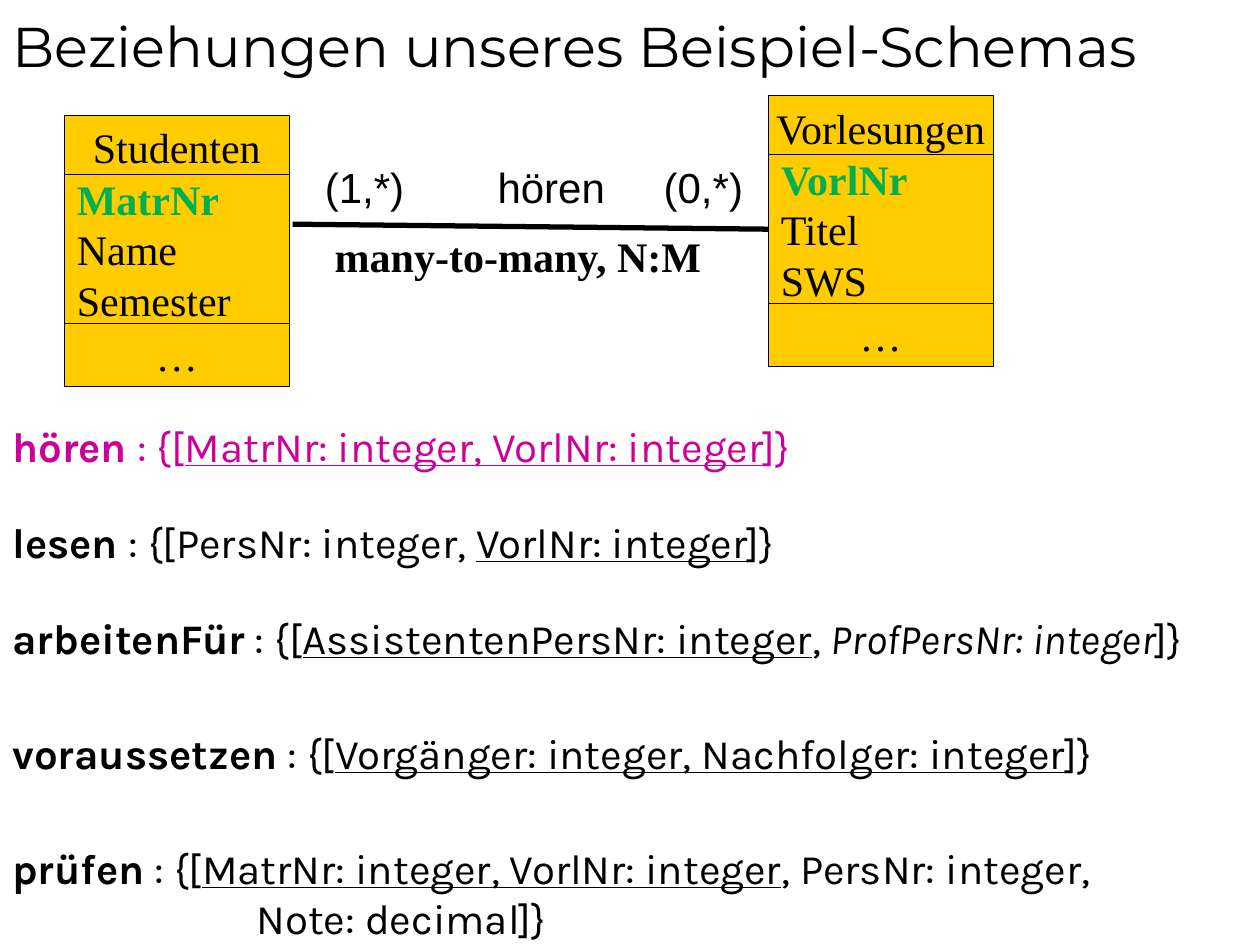
"""Build the slide on the relationships of the example schema."""
from lxml.etree import SubElement
from pptx import Presentation
from pptx.dml.color import RGBColor
from pptx.enum.shapes import MSO_CONNECTOR, MSO_SHAPE
from pptx.enum.text import MSO_ANCHOR, PP_ALIGN
from pptx.oxml.ns import qn
from pptx.util import Cm, Pt

COLORS = {
    "ink": "000000",
    "entity": "FFCC00",
    "key": "00B050",
    "highlight": "CC0099",
}
SERIF = "Times New Roman"
ENTITY_WIDTH, ROW_HEIGHT, LIST_OFFSET, LIST_HEIGHT = 4.53, 1.27, 1.19, 3
RELATION_GAP = 14.5

RELATIONS = [
    ("highlight", 1.4, [("hören", "b"), (" : {[", ""),
                        ("MatrNr: integer, VorlNr: integer", "u"), ("]}", "")]),
    ("ink", 1.4, [("lesen ", "b"), (": {[PersNr: integer, ", ""),
                  ("VorlNr: integer", "u"), ("]}", "")]),
    ("ink", 1.4, [("arbeitenFür", "b"), (" : {[", ""),
                  ("AssistentenPersNr: integer", "u"), (", ", ""),
                  ("ProfPersNr: integer", "i"), ("]}", "")]),
    ("ink", 1.78, [("voraussetzen", "b"), (" : {[", ""),
                   ("Vorgänger: integer, Nachfolger: integer", "u"), ("]}", "")]),
    ("ink", 1.78, [("prüfen", "b"), (" : {[", ""),
                   ("MatrNr: integer, VorlNr: integer", "u"),
                   (", PersNr: integer,", "")]),
]


def rgb(name):
    """Return the named colour."""
    return RGBColor.from_string(COLORS[name])


def add_span(para, text, font=SERIF, size=24, color="ink", style=""):
    """Add formatted text; style holds any of the letters b, i and u."""
    span = para.add_run()
    span.text = text
    span.font.name = font
    span.font.size = Pt(size)
    span.font.color.rgb = rgb(color)
    span.font.bold = "b" in style
    span.font.italic = "i" in style
    span.font.underline = "u" in style


def add_text_box(page, left, top, width, height, anchor=MSO_ANCHOR.TOP):
    """Add a wrapping text box and return its text frame."""
    frame = page.shapes.add_textbox(Cm(left), Cm(top), Cm(width), Cm(height)).text_frame
    frame.word_wrap = True
    frame.vertical_anchor = anchor
    return frame


def add_cell(page, left, top, height, lines, align=PP_ALIGN.CENTER):
    """Add one compartment of an entity with its (text, color, style) lines."""
    box = page.shapes.add_shape(MSO_SHAPE.RECTANGLE, Cm(left), Cm(top),
                                Cm(ENTITY_WIDTH), Cm(height))
    box.shadow.inherit = False
    box.fill.solid()
    box.fill.fore_color.rgb = rgb("entity")
    box.line.color.rgb = rgb("ink")
    box.line.width = Pt(0.5)
    frame = box.text_frame
    frame.word_wrap = align == PP_ALIGN.LEFT
    frame.vertical_anchor = MSO_ANCHOR.MIDDLE
    for index, (text, color, style) in enumerate(lines):
        para = frame.add_paragraph() if index else frame.paragraphs[0]
        para.alignment = align
        add_span(para, text, color=color, style=style)
    return box


def add_entity(page, left, top, name, key, attributes):
    """Add an entity and return its attribute compartment."""
    add_cell(page, left, top, ROW_HEIGHT, [(name, "ink", "")])
    lines = [(key, "key", "b")] + [(text, "ink", "") for text in attributes]
    box = add_cell(page, left, top + LIST_OFFSET, LIST_HEIGHT, lines, PP_ALIGN.LEFT)
    add_cell(page, left, top + LIST_OFFSET + LIST_HEIGHT, ROW_HEIGHT, [("…", "ink", "")])
    return box


def add_association(page, left, top, target):
    """Draw the line from a point to the left side of the target."""
    line = page.shapes.add_connector(MSO_CONNECTOR.STRAIGHT, Cm(left), Cm(top),
                                     target.left, target.top)
    line.end_connect(target, 1)
    line.line.color.rgb = rgb("ink")
    line.line.width = Pt(3)
    SubElement(line._element.spPr, qn("a:effectLst"))


def add_tab_stops(para, positions):
    """Set left tab stops at the given positions."""
    stops = SubElement(para._p.get_or_add_pPr(), qn("a:tabLst"))
    for position in positions:
        SubElement(stops, qn("a:tab"), pos=str(Cm(position)), algn="l")


def add_labels(page):
    """Add the labels above and below the association line."""
    para = add_text_box(page, 6.3, 3.13, 9, ROW_HEIGHT).paragraphs[0]
    add_tab_stops(para, [3.48, 6.83])
    add_span(para, "(1,*)\thören\t(0,*)", font="Arial")
    para = add_text_box(page, 6.45, 4.52, 7.98, ROW_HEIGHT).paragraphs[0]
    para.alignment = PP_ALIGN.CENTER
    add_span(para, "many-to-many, N:M", style="b")


def add_relations(page):
    """List the relation schemas below the diagram."""
    frame = add_text_box(page, 0, 7.95, 25.4, 11.1)
    for index, (color, spacing, spans) in enumerate(RELATIONS):
        para = frame.add_paragraph() if index else frame.paragraphs[0]
        para.line_spacing = spacing
        para.space_before = Pt(RELATION_GAP)
        for text, style in spans:
            add_span(para, text, font="Karla", color=color, style=style)
    para = frame.add_paragraph()
    para.line_spacing = 0.4
    para.space_before = Pt(RELATION_GAP)
    para._p.get_or_add_pPr().set("marL", str(Cm(4.92)))
    add_span(para, "Note: decimal]}", font="Karla")


def main():
    """Build and save the deck."""
    deck = Presentation()
    deck.slide_width, deck.slide_height = Cm(25.4), Cm(19.05)
    page = deck.slides.add_slide(deck.slide_layouts[6])
    title = add_text_box(page, 0, 0, 25.4, 1.72, MSO_ANCHOR.BOTTOM)
    add_span(title.paragraphs[0], "Beziehungen unseres Beispiel-Schemas",
             font="Montserrat", size=32)
    add_relations(page)
    add_entity(page, 1.3, 2.33, "Studenten", "MatrNr", ["Name", "Semester"])
    lectures = add_entity(page, 15.49, 1.93, "Vorlesungen", "VorlNr", ["Titel", "SWS"])
    add_association(page, 5.9, 4.52, lectures)
    add_labels(page)
    deck.save("out.pptx")


if __name__ == "__main__":
    main()
